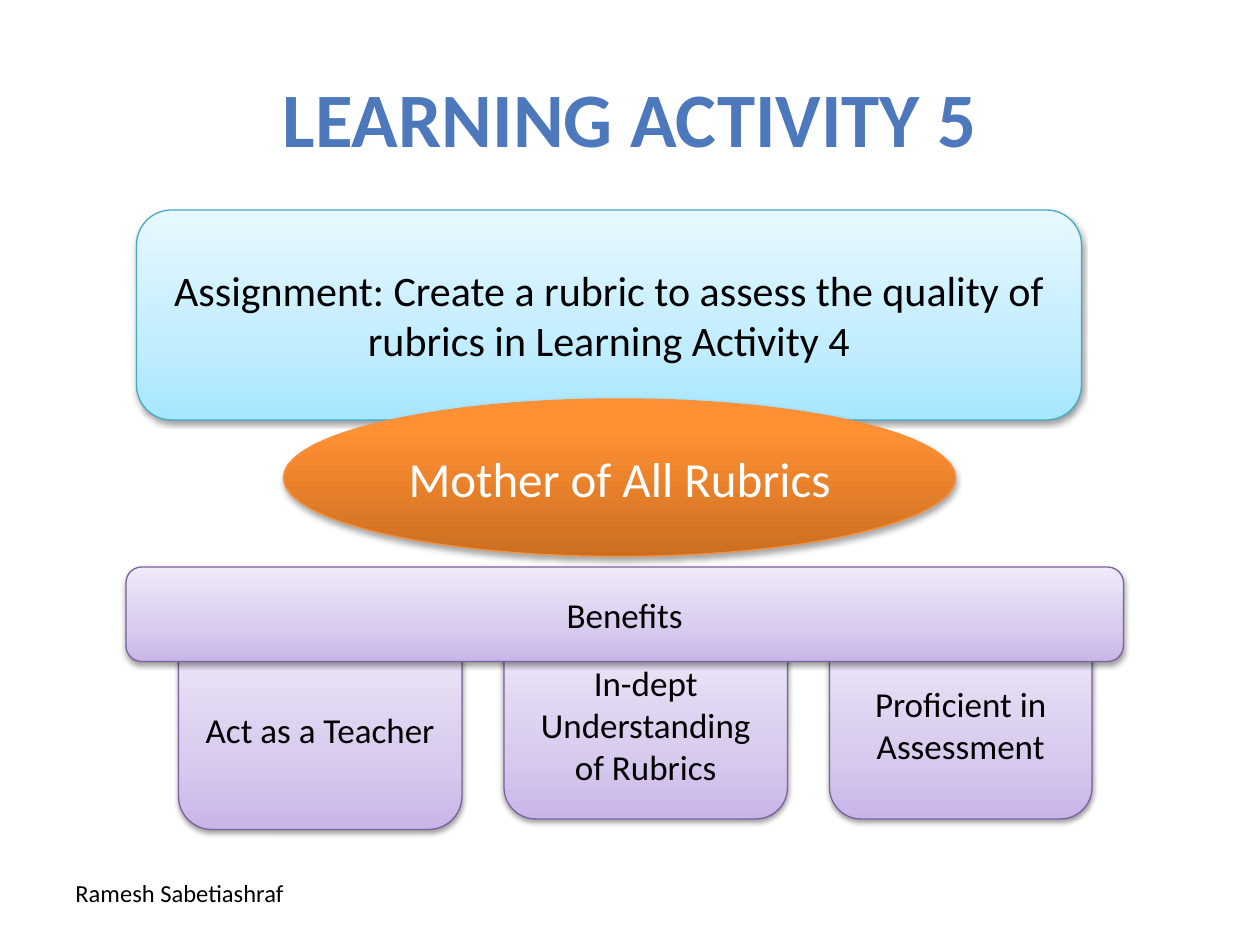
from lxml import etree
from pptx import Presentation, util as u
from pptx.dml.color import RGBColor
from pptx.enum import shapes, text
from pptx.oxml.ns import qn

PX = 7620  # EMU per px, 120 px to the inch
THEME = {
    "font": "Calibri",
    "ink": "000000",
    "paper": "FFFFFF",
    "title": [(0, "7494C9"), (49, "4D79BC"), (50, "346AAA"), (92, "325F94"), (100, "315D91")],
    "blue": ([(0, "A7E6FF"), (35, "C1EDFF"), (100, "E7F8FF")], "46AAC5", 38),
    "violet": ([(0, "C9B5E8"), (35, "D8CBEE"), (100, "F0EAF9")], "7D60A0", 38),
    "orange": ([(0, "CC6E20"), (80, "FF9034"), (100, "FF9136")], "F69240", 35),
    "size": {"title": 44, "task": 24, "goal": 28, "gain": 20, "foot": 14},
}


def blend(fill, node, stops, angle):
    """Give fill, held in the XML node, a gradient of (percent, colour) stops."""
    fill.gradient()
    fill.gradient_angle = angle
    items = node.find(".//" + qn("a:gsLst"))
    for old in list(items):
        items.remove(old)
    for at, tint in stops:
        stop = etree.SubElement(items, qn("a:gs"), pos=str(at * 1000))
        etree.SubElement(stop, qn("a:srgbClr"), val=tint)


def write(shape, words, size, tint, align=text.PP_ALIGN.CENTER):
    frame = shape.text_frame
    frame.word_wrap = True
    para = frame.paragraphs[0]
    para.alignment = align
    run = para.add_run()
    run.text = words
    run.font.name = THEME["font"]
    run.font.size = u.Pt(THEME["size"][size])
    run.font.color.rgb = RGBColor.from_string(THEME[tint])
    return run


deck = Presentation()
deck.slide_width, deck.slide_height = 1200 * PX, 900 * PX
slide = deck.slides.add_slide(deck.slide_layouts[5])

foot = slide.shapes.add_textbox(60 * PX, 830 * PX, 330 * PX, 68 * PX)
write(foot, "Ramesh Sabetiashraf", "foot", "ink", text.PP_ALIGN.LEFT)

title = slide.shapes.title
title.left, title.top, title.width, title.height = 60 * PX, 36 * PX, 1080 * PX, 150 * PX
title.fill.solid()
title.fill.fore_color.rgb = RGBColor.from_string(THEME["paper"])
title.text_frame.vertical_anchor = text.MSO_ANCHOR.MIDDLE
run = write(title, "LEARNING ACTIVITY 5", "title", "ink")
run.font.bold = True
blend(run.font.fill, run._r, THEME["title"], 270)

ROUND = shapes.MSO_SHAPE.ROUNDED_RECTANGLE
OVAL = shapes.MSO_SHAPE.OVAL
TASK = "Assignment: Create a rubric to assess the quality of rubrics in Learning Activity 4"
# kind, left, top, width, height, look, size, ink, words
parts = [
    (ROUND, 130, 200, 900, 200, "blue", "task", "ink", TASK),
    (ROUND, 170, 600, 270, 190, "violet", "gain", "ink", "Act as a Teacher"),
    (ROUND, 480, 600, 270, 180, "violet", "gain", "ink", "In-dept Understanding of Rubrics"),
    (ROUND, 790, 600, 250, 180, "violet", "gain", "ink", "Proficient in Assessment"),
    (ROUND, 120, 540, 950, 90, "violet", "gain", "ink", "Benefits"),
    (OVAL, 270, 380, 640, 150, "orange", "goal", "paper", "Mother of All Rubrics"),
]
for kind, left, top, wide, high, look, size, tint, words in parts:
    stops, edge, shade = THEME[look]
    shape = slide.shapes.add_shape(kind, left * PX, top * PX, wide * PX, high * PX)
    blend(shape.fill, shape._element.spPr, stops, 90)
    shape.line.color.rgb = RGBColor.from_string(edge)
    shape.line.width = u.Pt(0.75)
    shape.shadow.inherit = False
    glow = etree.SubElement(
        shape._element.spPr.find(qn("a:effectLst")), qn("a:outerShdw"),
        blurRad="40000", dist="20000", dir="5400000", rotWithShape="0")
    black = etree.SubElement(glow, qn("a:srgbClr"), val=THEME["ink"])
    etree.SubElement(black, qn("a:alpha"), val=str(shade * 1000))
    shape.text_frame.vertical_anchor = text.MSO_ANCHOR.MIDDLE
    write(shape, words, size, tint)

deck.save("out.pptx")
